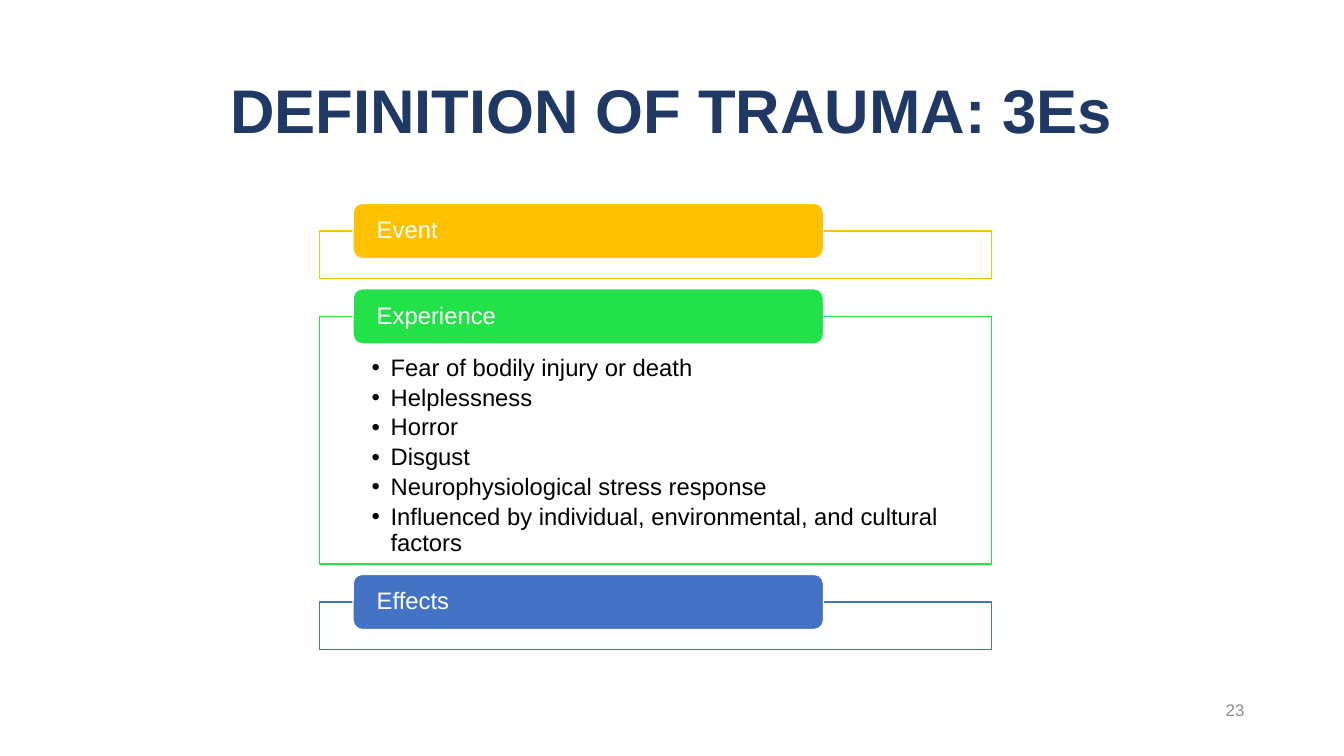
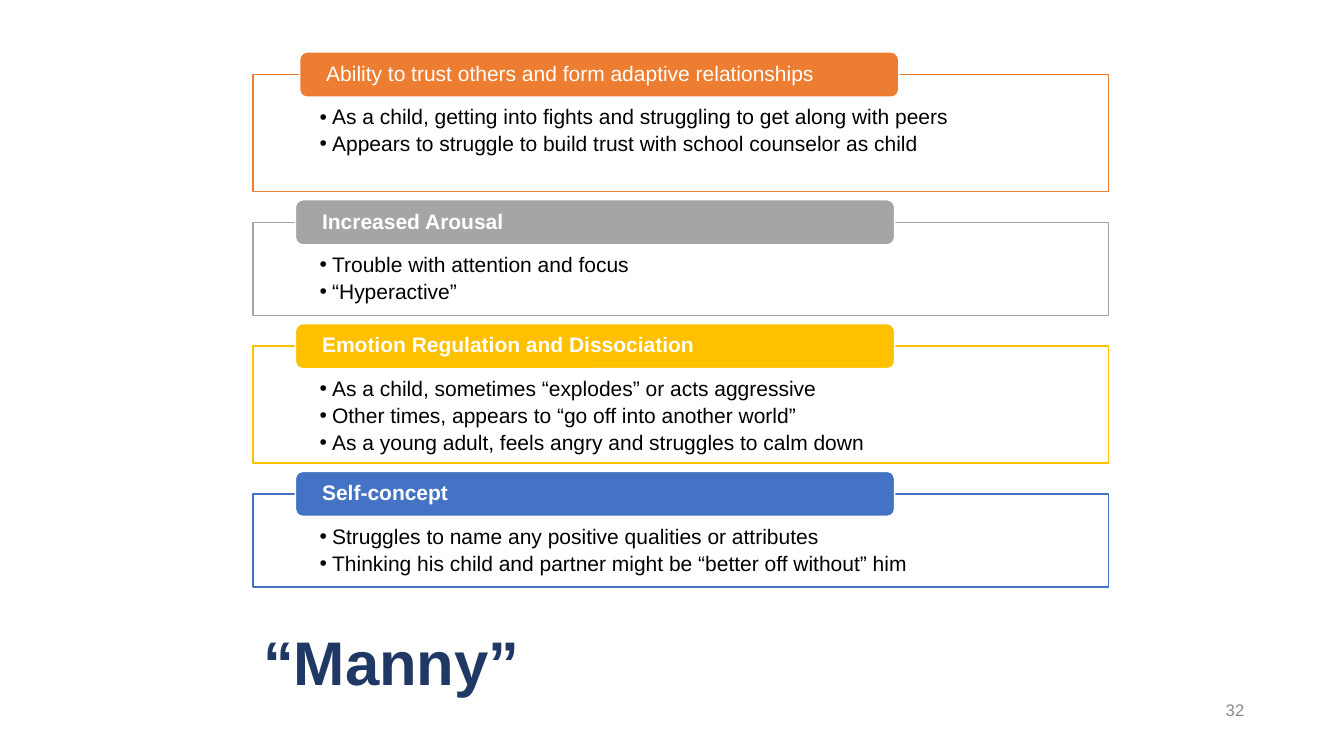
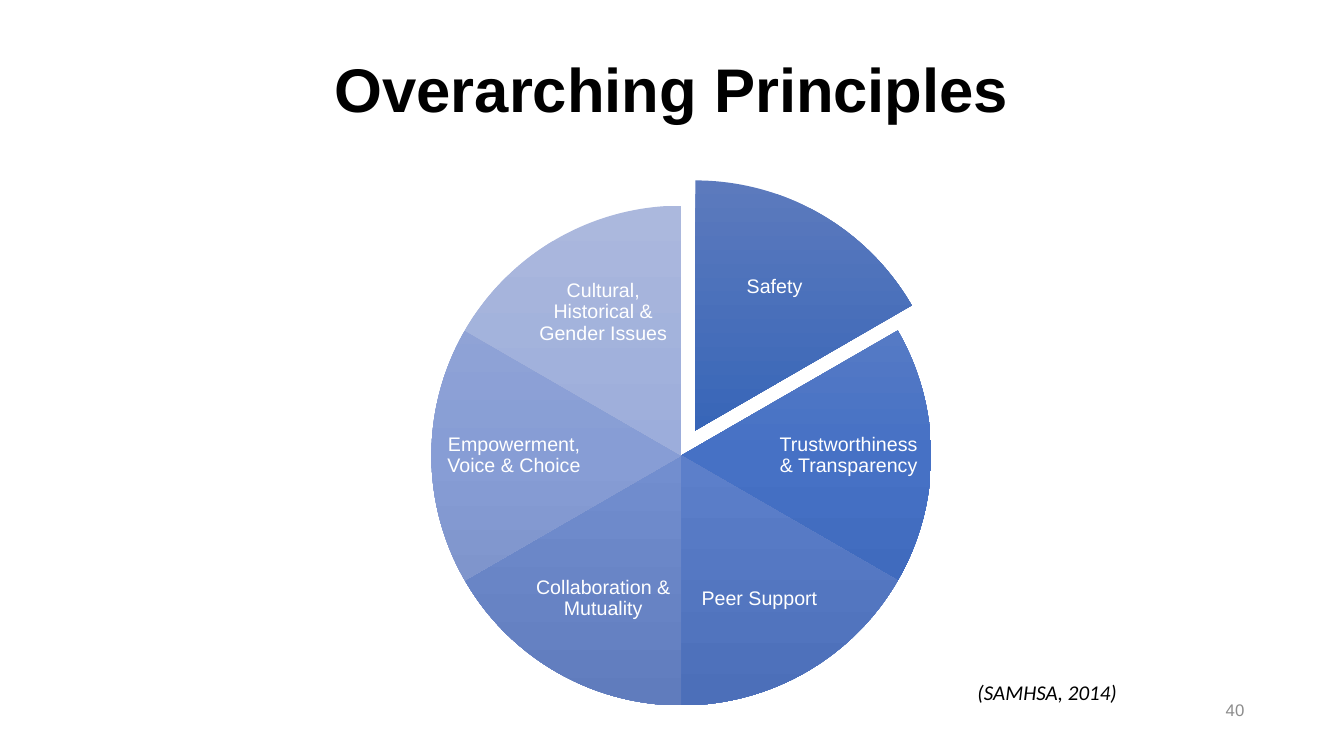
from copy import deepcopy

from lxml.etree import SubElement
from pptx import Presentation
from pptx.dml.color import RGBColor
from pptx.enum.shapes import MSO_SHAPE as Shape
from pptx.enum.text import MSO_ANCHOR as Anchor, MSO_AUTO_SIZE as AutoSize, PP_ALIGN as Align
from pptx.oxml.ns import qn
from pptx.util import Pt

# Shared look
NAVY = RGBColor(0x20, 0x38, 0x64)
BLACK = RGBColor(0x00, 0x00, 0x00)
WHITE = RGBColor(0xFF, 0xFF, 0xFF)
GRAY = RGBColor(0x8C, 0x8C, 0x8C)
GOLD = RGBColor(0xFF, 0xC0, 0x00)
GREEN = RGBColor(0x23, 0xE1, 0x48)
BLUE = RGBColor(0x44, 0x72, 0xC4)
ORANGE = RGBColor(0xED, 0x7D, 0x31)
SILVER = RGBColor(0xA5, 0xA5, 0xA5)
FONT = "Arial"

# Wheel slices: label, label centre, gradient from top to bottom
SLICES = [
    ("Safety", 553.3, 205.2,
     [RGBColor(0x5C, 0x7A, 0xBD), RGBColor(0x38, 0x66, 0xB8), RGBColor(0x2D, 0x59, 0xA8)]),
    ("Trustworthiness & Transparency", 606.2, 325.4,
     [RGBColor(0x66, 0x84, 0xC6), RGBColor(0x46, 0x71, 0xC5), RGBColor(0x38, 0x62, 0xB5)]),
    ("Peer Support", 542.5, 427.7,
     [RGBColor(0x76, 0x90, 0xCC), RGBColor(0x5C, 0x7F, 0xCA), RGBColor(0x4C, 0x6F, 0xB9)]),
    ("Collaboration & Mutuality", 430.9, 427.7,
     [RGBColor(0x87, 0x9C, 0xD1), RGBColor(0x72, 0x8E, 0xCF), RGBColor(0x60, 0x7C, 0xBD)]),
    ("Empowerment, Voice & Choice", 367.2, 325.4,
     [RGBColor(0x99, 0xAA, 0xD7), RGBColor(0x87, 0x9D, 0xD5), RGBColor(0x74, 0x8A, 0xC1)]),
    ("Cultural, Historical & Gender Issues", 430.9, 223.2,
     [RGBColor(0xAB, 0xB8, 0xDD), RGBColor(0x9C, 0xAD, 0xDB), RGBColor(0x87, 0x98, 0xC6)]),
]


def place(sp, x, y, w, h):
    sp.left, sp.top, sp.width, sp.height = Pt(x), Pt(y), Pt(w), Pt(h)


def set_frame(tf, anchor, left=7.2, top=3.6, right=7.2, bottom=3.6):
    tf.word_wrap = True
    tf.auto_size = AutoSize.NONE
    tf.vertical_anchor = anchor
    tf.margin_left, tf.margin_top = Pt(left), Pt(top)
    tf.margin_right, tf.margin_bottom = Pt(right), Pt(bottom)


def add_run(p, text, size, color, align=Align.LEFT, bold=False, italic=False,
            font=FONT, spacing=0.9):
    p.alignment = align
    p.line_spacing = spacing
    r = p.add_run()
    r.text = text
    r.font.name, r.font.size = font, Pt(size)
    r.font.bold, r.font.italic = bold, italic
    r.font.color.rgb = color


def add_bullet(p, indent):
    pPr = p._p.get_or_add_pPr()
    pPr.set("marL", str(Pt(indent)))
    pPr.set("indent", str(-Pt(indent)))
    SubElement(pPr, qn("a:buFont")).set("typeface", FONT)
    SubElement(pPr, qn("a:buChar")).set("char", "•")


def add_text(s, text, x, y, w, h, size, color, anchor=Anchor.MIDDLE, inset=7.2, **style):
    sp = s.shapes.add_textbox(Pt(x), Pt(y), Pt(w), Pt(h))
    set_frame(sp.text_frame, anchor, left=inset, right=inset)
    add_run(sp.text_frame.paragraphs[0], text, size, color, **style)


def add_box(s, kind, x, y, w, h, fill, line):
    sp = s.shapes.add_shape(kind, Pt(x), Pt(y), Pt(w), Pt(h))
    sp.shadow.inherit = False
    sp.fill.solid()
    sp.fill.fore_color.rgb = fill
    sp.line.color.rgb = line
    sp.line.width = Pt(1)
    return sp


def new_slide(prs, title, number, x, y, w, h, align=Align.CENTER, color=NAVY):
    """Title-only slide with the shared title style and page number."""
    s = prs.slides.add_slide(prs.slide_layouts[5])
    sp = s.shapes.title
    place(sp, x, y, w, h)
    set_frame(sp.text_frame, Anchor.MIDDLE)
    add_run(sp.text_frame.paragraphs[0], title, 44, color, align, bold=True)
    add_text(s, number, 866, 492.5, 30, 29, 12, GRAY, align=Align.RIGHT, spacing=1.0)
    return s


def add_panels(s, panels, x, y, w, gap, size, header, inset, indent):
    """Stack outlined lists, each with a header tab centred on its top edge."""
    shift, header_w, header_h, header_inset = header
    for label, color, h, items, bold, nudge in panels:
        sp = add_box(s, Shape.RECTANGLE, x, y, w, h, WHITE, color)
        tf = sp.text_frame
        set_frame(tf, Anchor.TOP, inset[0], inset[1], inset[0], 8)
        for i, item in enumerate(items):
            p = tf.add_paragraph() if i else tf.paragraphs[0]
            add_bullet(p, indent)
            p.space_after = Pt(3)
            add_run(p, item, size, BLACK)
        tab = add_box(s, Shape.ROUNDED_RECTANGLE, x + shift + nudge, y - header_h / 2,
                      header_w, header_h, color, WHITE)
        set_frame(tab.text_frame, Anchor.MIDDLE, header_inset, 0, header_inset, 0)
        add_run(tab.text_frame.paragraphs[0], label, size, WHITE, bold=bold)
        y += h + gap


def add_slice(s, x, y, diameter, index, colors):
    """One sixth of the wheel, clockwise from the top."""
    sp = s.shapes.add_shape(Shape.PIE, Pt(x), Pt(y), Pt(diameter), Pt(diameter))
    sp.shadow.inherit = False
    sp.line.fill.background()
    sp.adjustments[0] = (162 + 36 * index) % 216
    sp.adjustments[1] = (198 + 36 * index) % 216
    sp.fill.gradient()
    sp.fill.gradient_angle = 270
    stops = sp.element.spPr.find(qn("a:gradFill")).find(qn("a:gsLst"))
    stops.insert(1, deepcopy(stops[0]))
    for i, (stop, color) in enumerate(zip(sp.fill.gradient_stops, colors)):
        stop.position = i / 2
        stop.color.rgb = color


def add_wheel(s, x, y, diameter):
    for i, (label, cx, cy, colors) in enumerate(SLICES):
        dx, dy = (10, -18) if i == 0 else (0, 0)
        add_slice(s, x + dx, y + dy, diameter, i, colors)
        add_text(s, label, cx - 53, cy - 37, 106, 74, 14, WHITE,
                 inset=1.3, align=Align.CENTER)


def main():
    prs = Presentation()
    prs.slide_width, prs.slide_height = Pt(960), Pt(540)

    # Definition: three Es
    s = new_slide(prs, "DEFINITION OF TRAUMA: 3Es", "23", 66, 28.8, 828, 104.4)
    symptoms = [
        "Fear of bodily injury or death",
        "Helplessness",
        "Horror",
        "Disgust",
        "Neurophysiological stress response",
        "Influenced by individual, environmental, and cultural factors",
    ]
    add_panels(s, [
        ("Event", GOLD, 34, [], False, 0),
        ("Experience", GREEN, 177, symptoms, False, 0),
        ("Effects", BLUE, 34, [], False, 0),
    ], x=228.2, y=165, w=480, gap=27, size=17,
        header=(24, 336, 39.4, 15), inset=(37.3, 28), indent=13.5)

    # Case example
    s = new_slide(prs, "“Manny”", "32", 180.7, 442.8, 573.8, 64.8, Align.LEFT)
    add_panels(s, [
        ("Ability to trust others and form adaptive relationships", ORANGE, 83.5, [
            "As a child, getting into fights and struggling to get along with peers",
            "Appears to struggle to build trust with school counselor as child",
        ], False, 3),
        ("Increased Arousal", SILVER, 66.5, [
            "Trouble with attention and focus",
            "“Hyperactive”",
        ], True, 0),
        ("Emotion Regulation and Dissociation", GOLD, 83.5, [
            "As a child, sometimes “explodes” or acts aggressive",
            "Other times, appears to “go off into another world”",
            "As a young adult, feels angry and struggles to calm down",
        ], True, 0),
        ("Self-concept", BLUE, 66.5, [
            "Struggles to name any positive qualities or attributes",
            "Thinking his child and partner might be “better off without” him",
        ], True, 0),
    ], x=180.7, y=53.3, w=611.3, gap=22, size=15,
        header=(30.3, 428, 32.2, 17.5), inset=(47.5, 23), indent=9)

    # Principles wheel
    s = new_slide(prs, "Overarching Principles", "40", 66, 28.8, 828, 74.9, color=BLACK)
    add_wheel(s, 308.2, 146.9, 357)
    add_text(s, "(SAMHSA, 2014)", 647.3, 481.7, 157.7, 25.2, 15, BLACK, Anchor.TOP,
             align=Align.RIGHT, italic=True, font="Calibri", spacing=1.0)

    prs.save("out.pptx")


if __name__ == "__main__":
    main()
